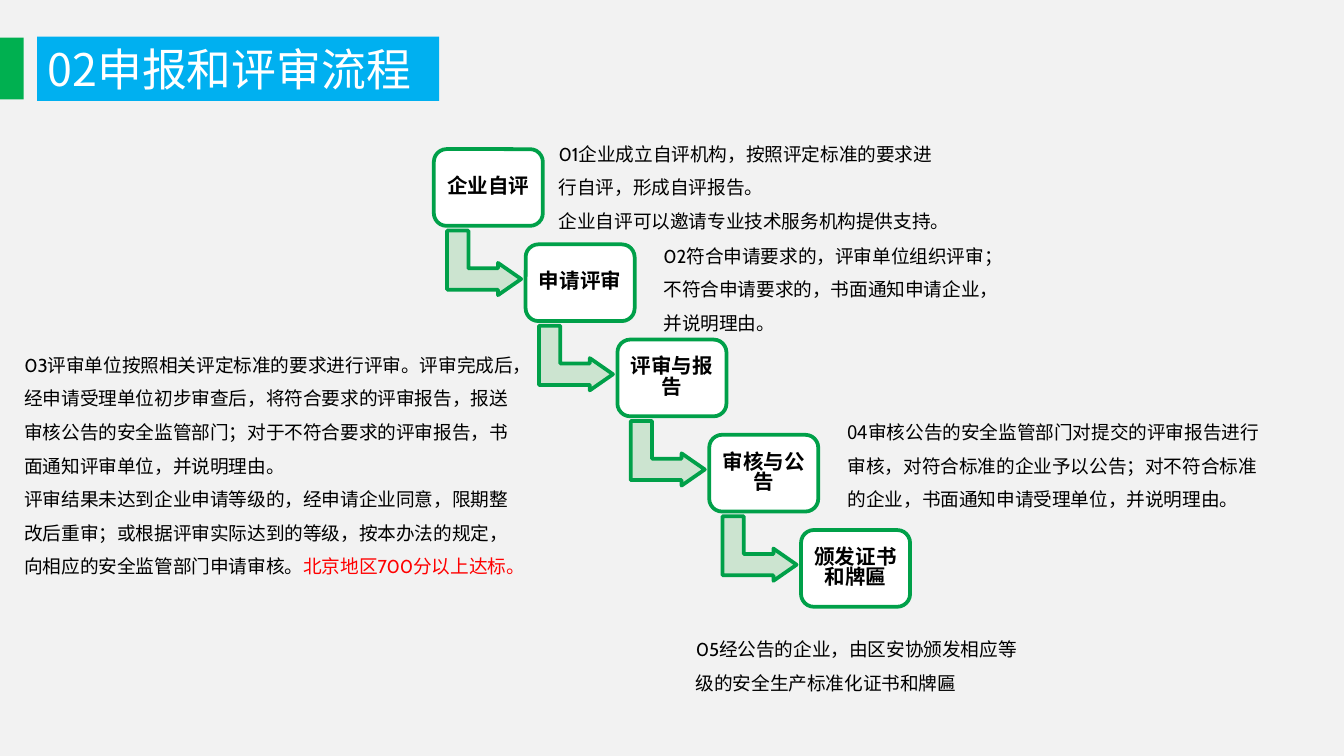
from lxml.etree import SubElement
from pptx import Presentation
from pptx.dml.color import RGBColor
from pptx.enum.shapes import MSO_SHAPE
from pptx.enum.text import MSO_ANCHOR, MSO_AUTO_SIZE, PP_ALIGN
from pptx.oxml.ns import qn
from pptx.util import Cm, Pt

COLORS = {
    "background": "F2F2F2",
    "title": "00B0F0",
    "accent": "00B050",
    "outline": "00A049",
    "arrow": "CCE4D0",
    "white": "FFFFFF",
    "black": "000000",
    "red": "FF0000",
}
CJK_FONT = "Noto Sans CJK SC"
LATIN_FONT = "Cabin"

STEPS = ["企业自评", "申请评审", "评审与报告", "审核与公告", "颁发证书和牌匾"]
STEP_LEFT, STEP_TOP = 8.2, 2.82
STEP_WIDTH, STEP_HEIGHT = 2.06, 1.45
STEP_RIGHT, STEP_DOWN = 1.735, 1.8

NOTES = [
    ((10.31, 2.36, 7.8, 2.18), LATIN_FONT, [
        [("01企业成立自评机构，按照评定标准的要求进行自评，形成自评报告。", "black")],
        [("企业自评可以邀请专业技术服务机构提供支持。", "black")],
    ]),
    ((12.29, 4.29, 6.76, 2.18), LATIN_FONT, [
        [("02符合申请要求的，评审单位组织评审；不符合申请要求的，书面通知申请企业，并说明理由。", "black")],
    ]),
    ((0.21, 6.35, 9.78, 4.75), LATIN_FONT, [
        [("03评审单位按照相关评定标准的要求进行评审。评审完成后，经申请受理单位初步审查后，"
          "将符合要求的评审报告，报送审核公告的安全监管部门；对于不符合要求的评审报告，"
          "书面通知评审单位，并说明理由。", "black")],
        [("评审结果未达到企业申请等级的，经申请企业同意，限期整改后重审；"
          "或根据评审实际达到的等级，按本办法的规定，向相应的安全监管部门申请审核。", "black"),
         ("北京地区700分以上达标。", "red")],
    ]),
    ((15.77, 7.62, 8.56, 2.18), CJK_FONT, [
        [("04审核公告的安全监管部门对提交的评审报告进行审核，对符合标准的企业予以公告；"
          "对不符合标准的企业，书面通知申请受理单位，并说明理由。", "black")],
    ]),
    ((12.9, 11.73, 6.76, 1.55), LATIN_FONT, [
        [("05经公告的企业，由区安协颁发相应等级的安全生产标准化证书和牌匾", "black")],
    ]),
]


class SlideBuilder:
    def __init__(self, slide):
        self.slide = slide
        self.paint(slide.background.fill, "background")

    def paint(self, fill, color):
        fill.solid()
        fill.fore_color.rgb = RGBColor.from_string(COLORS[color])

    def style(self, paragraph, size, color, font=CJK_FONT, bold=False):
        paragraph.font.size = Pt(size)
        paragraph.font.bold = bold
        paragraph.font.name = font
        paragraph.font.color.rgb = RGBColor.from_string(COLORS[color])
        defaults = paragraph._p.pPr.find(qn("a:defRPr"))
        SubElement(defaults, qn("a:ea")).set("typeface", CJK_FONT)

    def title(self, text, left, top, width, height):
        title = self.slide.shapes.title
        title.left, title.top = Cm(left), Cm(top)
        title.width, title.height = Cm(width), Cm(height)
        self.paint(title.fill, "title")
        frame = title.text_frame
        frame.text = text
        frame.word_wrap = True
        frame.auto_size = MSO_AUTO_SIZE.NONE
        frame.vertical_anchor = MSO_ANCHOR.MIDDLE
        frame.margin_left = frame.margin_right = Cm(0.2)
        frame.margin_top = frame.margin_bottom = Cm(0.1)
        paragraph = frame.paragraphs[0]
        paragraph.alignment = PP_ALIGN.LEFT
        self.style(paragraph, 24, "white")

    def shape(self, kind, box, fill, line=None):
        shape = self.slide.shapes.add_shape(kind, *map(Cm, box))
        shape.shadow.inherit = False
        self.paint(shape.fill, fill)
        if line:
            self.paint(shape.line.fill, line)
            shape.line.width = Pt(2)
        else:
            shape.line.fill.background()
        return shape

    def arrow(self, left, top):
        arrow = self.shape(MSO_SHAPE.BENT_UP_ARROW, (left, top, 1.22, 1.4), "arrow", "outline")
        arrow.rotation = 90
        for index, value in enumerate((0.33, 0.25, 0.36)):
            arrow.adjustments[index] = value

    def step(self, text, left, top):
        box = (left, top, STEP_WIDTH, STEP_HEIGHT)
        step = self.shape(MSO_SHAPE.ROUNDED_RECTANGLE, box, "white", "outline")
        frame = step.text_frame
        frame.text = text
        frame.word_wrap = True
        frame.vertical_anchor = MSO_ANCHOR.MIDDLE
        frame.margin_left = frame.margin_right = Cm(0.06)
        frame.margin_top = frame.margin_bottom = Cm(0.06)
        paragraph = frame.paragraphs[0]
        paragraph.alignment = PP_ALIGN.CENTER
        paragraph.line_spacing = 0.82
        self.style(paragraph, 11, "black", bold=True)

    def note(self, box, font, paragraphs):
        frame = self.slide.shapes.add_textbox(*map(Cm, box)).text_frame
        frame.word_wrap = True
        for index, runs in enumerate(paragraphs):
            paragraph = frame.add_paragraph() if index else frame.paragraphs[0]
            paragraph.line_spacing = Pt(18)
            self.style(paragraph, 10, "black", font)
            for text, color in runs:
                run = paragraph.add_run()
                run.text = text
                if color != "black":
                    run.font.color.rgb = RGBColor.from_string(COLORS[color])


def main():
    presentation = Presentation()
    presentation.slide_width, presentation.slide_height = Cm(25.4), Cm(14.29)
    builder = SlideBuilder(presentation.slides.add_slide(presentation.slide_layouts[5]))
    builder.title("02申报和评审流程", 0.7, 0.69, 7.6, 1.22)
    builder.shape(MSO_SHAPE.RECTANGLE, (0, 0.71, 0.45, 1.17), "accent")
    for index, text in enumerate(STEPS):
        left = STEP_LEFT + index * STEP_RIGHT
        top = STEP_TOP + index * STEP_DOWN
        if index < len(STEPS) - 1:
            builder.arrow(left + 0.34, top + STEP_HEIGHT)
        builder.step(text, left, top)
    for box, font, paragraphs in NOTES:
        builder.note(box, font, paragraphs)
    presentation.save("out.pptx")


if __name__ == "__main__":
    main()
